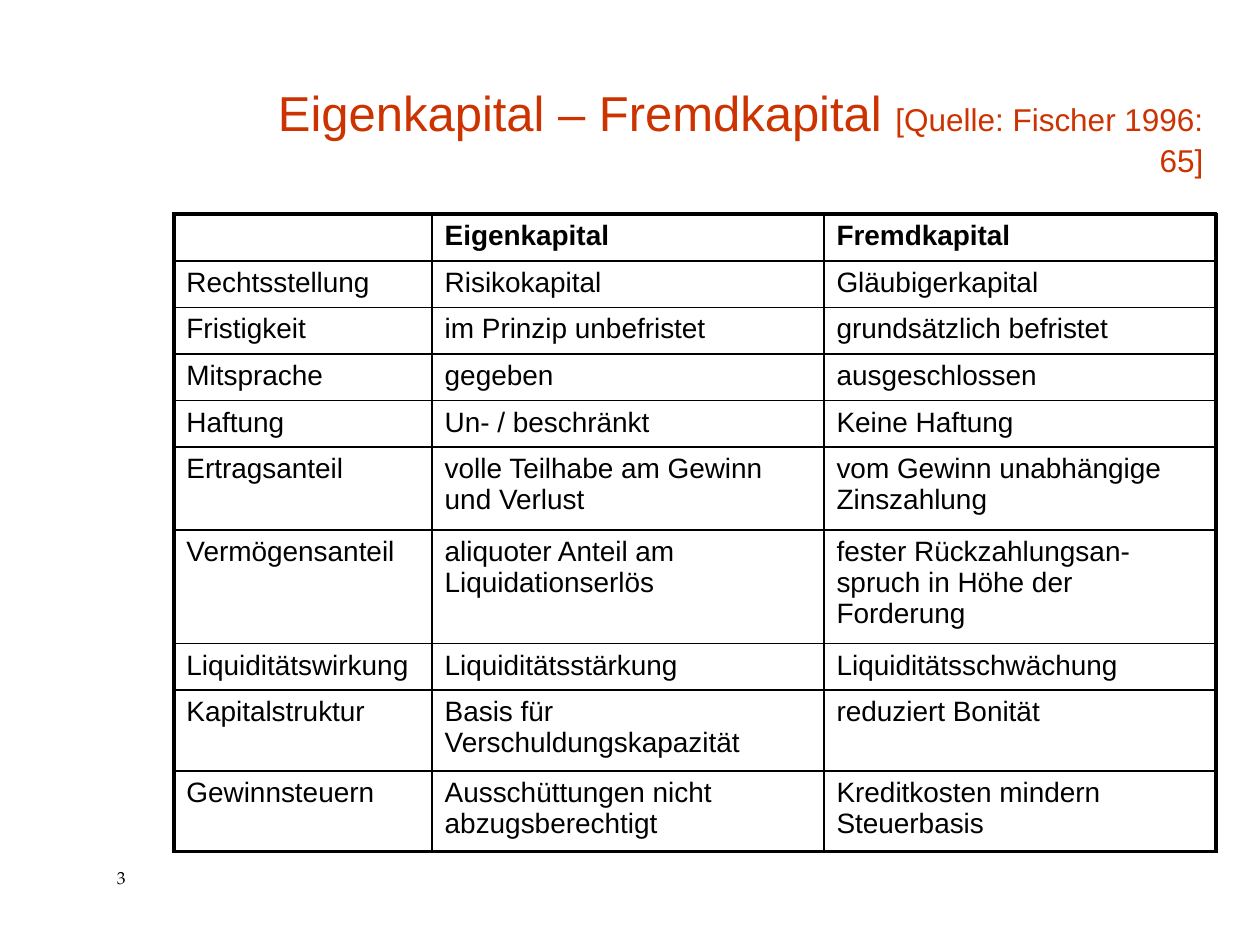
from lxml.etree import SubElement
from pptx import Presentation
from pptx.dml.color import RGBColor
from pptx.enum.text import MSO_ANCHOR as Anchor, PP_ALIGN as Align
from pptx.oxml.ns import qn
from pptx.util import Inches, Pt

BLACK = RGBColor(0x00, 0x00, 0x00)
RED = RGBColor(0xCC, 0x33, 0x00)
THIN, THICK = Pt(1), Pt(2.25)

COLUMN_WIDTHS = [2.05, 3.11, 3.11]
ROWS = [
    (0.37, "", "Eigenkapital", "Fremdkapital"),
    (0.37, "Rechtsstellung", "Risikokapital", "Gläubigerkapital"),
    (0.37, "Fristigkeit", "im Prinzip unbefristet", "grundsätzlich befristet"),
    (0.37, "Mitsprache", "gegeben", "ausgeschlossen"),
    (0.37, "Haftung", "Un- / beschränkt", "Keine Haftung"),
    (0.66, "Ertragsanteil", "volle Teilhabe am Gewinn und Verlust",
     "vom Gewinn unabhängige Zinszahlung"),
    (0.9, "Vermögensanteil", "aliquoter Anteil am Liquidationserlös",
     "fester Rückzahlungsan-spruch in Höhe der Forderung"),
    (0.37, "Liquiditätswirkung", "Liquiditätsstärkung", "Liquiditätsschwächung"),
    (0.64, "Kapitalstruktur", "Basis für Verschuldungskapazität", "reduziert Bonität"),
    (0.64, "Gewinnsteuern", "Ausschüttungen nicht abzugsberechtigt",
     "Kreditkosten mindern Steuerbasis"),
]


def style_font(font, name, size, color, bold=False):
    font.name = name
    font.size = Pt(size)
    font.color.rgb = color
    font.bold = bold


def add_border(cell, side, width):
    """Draw one cell border; side is L, R, T or B, added in that order."""
    properties = cell._tc.get_or_add_tcPr()
    line = SubElement(properties, qn(f"a:ln{side}"), w=str(int(width)))
    fill = SubElement(line, qn("a:solidFill"))
    SubElement(fill, qn("a:srgbClr"), val=str(BLACK))


deck = Presentation()
deck.slide_width, deck.slide_height = Inches(10), Inches(7.5)
page = deck.slides.add_slide(deck.slide_layouts[6])

# Page number
number_box = page.shapes.add_textbox(Inches(0.83), Inches(6.83), Inches(0.67), Inches(0.27))
number_box.text_frame.word_wrap = True
number_box.text_frame.text = "3"
style_font(number_box.text_frame.paragraphs[0].runs[0].font, "TeX Gyre Pagella", 10, BLACK)

# Title with its source
title_box = page.shapes.add_textbox(Inches(2.09), Inches(0.42), Inches(7.56), Inches(1.05))
title_box.text_frame.word_wrap = True
title_box.text_frame.vertical_anchor = Anchor.BOTTOM
title = title_box.text_frame.paragraphs[0]
title.alignment = Align.RIGHT
for text, size in [("Eigenkapital – Fremdkapital ", 28), ("[Quelle: Fischer 1996: 65]", 18)]:
    span = title.add_run()
    span.text = text
    style_font(span.font, "Arial", size, RED)

# Comparison table
last_row, last_column = len(ROWS) - 1, len(COLUMN_WIDTHS) - 1
table = page.shapes.add_table(
    len(ROWS), len(COLUMN_WIDTHS), Inches(1.38), Inches(1.7),
    Inches(sum(COLUMN_WIDTHS)), Inches(sum(row[0] for row in ROWS))).table
table.first_row = False
table.horz_banding = False
for column, width in zip(table.columns, COLUMN_WIDTHS):
    column.width = Inches(width)

for row_index, (height, *texts) in enumerate(ROWS):
    table.rows[row_index].height = Inches(height)
    for column_index, text in enumerate(texts):
        cell = table.cell(row_index, column_index)
        outer_edges = {
            "L": column_index == 0,
            "R": column_index == last_column,
            "T": row_index == 0,
            "B": row_index == last_row,
        }
        for side, is_outer in outer_edges.items():
            add_border(cell, side, THICK if is_outer else THIN)
        cell.fill.background()
        cell.text_frame.text = text
        para = cell.text_frame.paragraphs[0]
        style_font(para.font, "Arial", 16, BLACK)
        for span in para.runs:
            style_font(span.font, "Arial", 16, BLACK, bold=row_index == 0)

deck.save("out.pptx")
